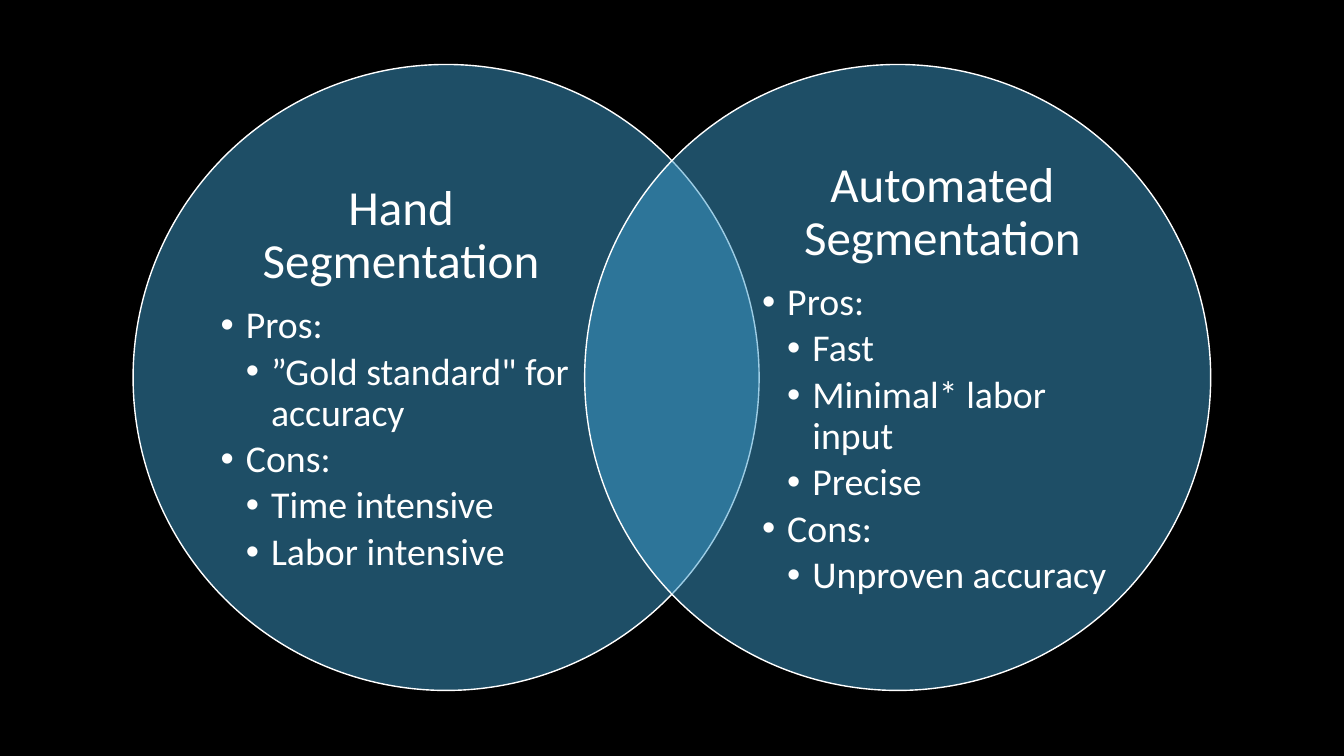
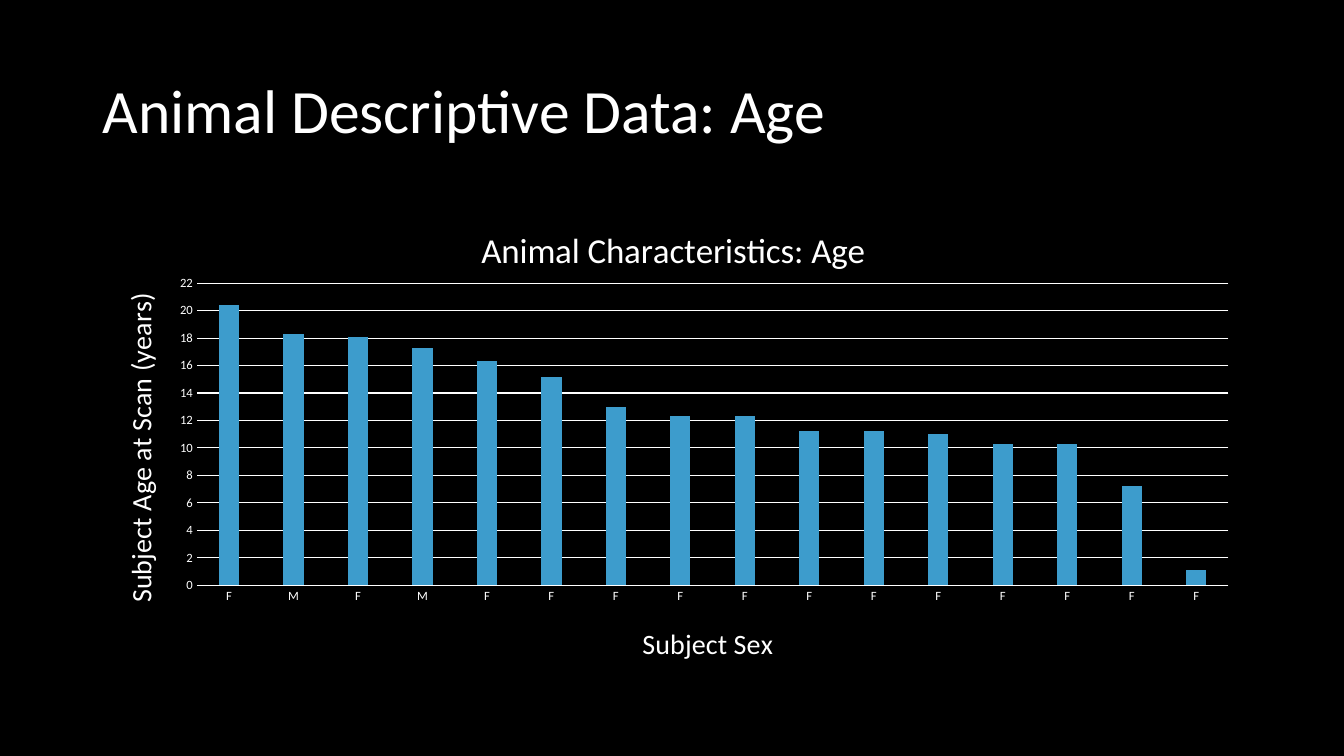
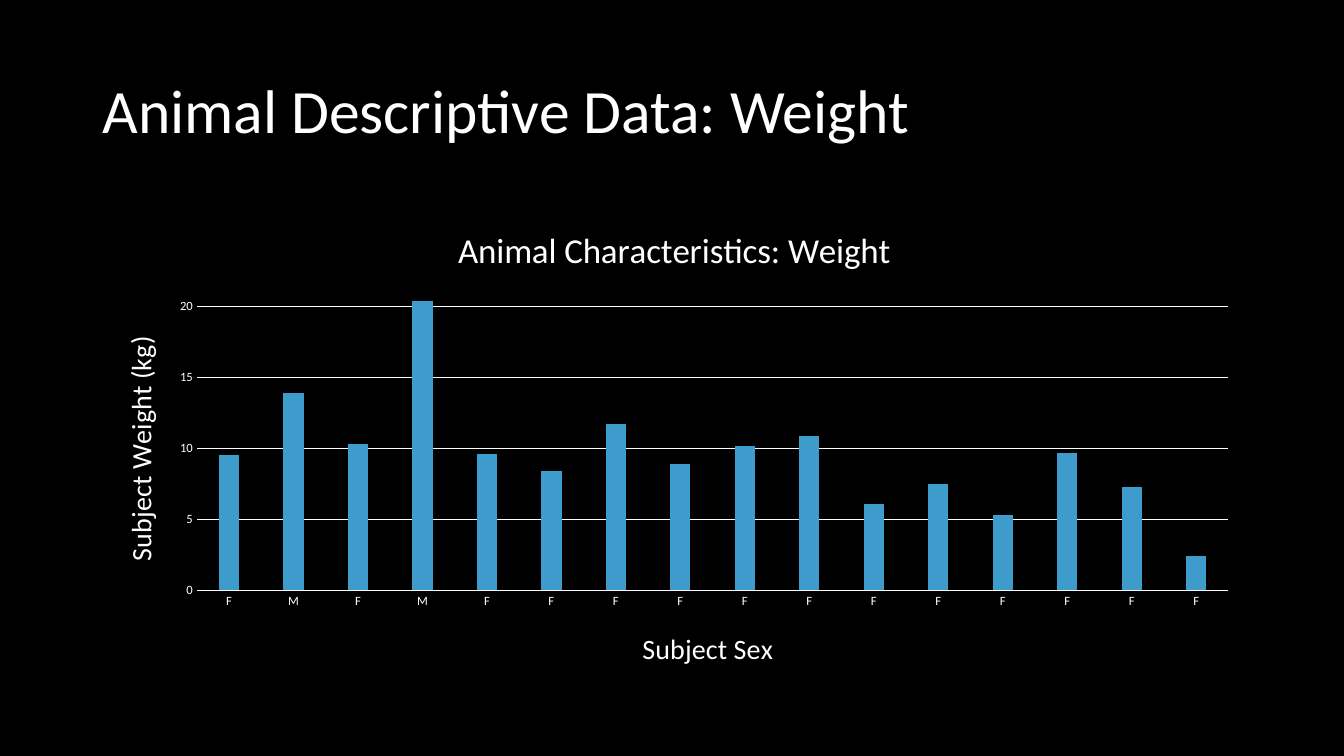
from dataclasses import dataclass

from lxml.etree import SubElement
from pptx import Presentation
from pptx.chart.data import CategoryChartData
from pptx.dml.color import RGBColor
from pptx.enum.chart import XL_CHART_TYPE, XL_TICK_MARK
from pptx.enum.shapes import MSO_SHAPE
from pptx.enum.text import MSO_ANCHOR, MSO_AUTO_SIZE, PP_ALIGN
from pptx.oxml import parse_xml
from pptx.oxml.ns import nsdecls, qn
from pptx.util import Inches, Pt

TITLE_ONLY, TWO_CONTENT = 5, 3


@dataclass(frozen=True)
class Theme:
    font: str = "Calibri"
    background: RGBColor = RGBColor(0x00, 0x00, 0x00)
    ink: RGBColor = RGBColor(0xFF, 0xFF, 0xFF)
    accent: RGBColor = RGBColor(0x3D, 0x9C, 0xCC)
    title: int = 44
    heading: int = 35
    item: int = 27
    chart_title: int = 25
    axis_title: int = 20
    tick_label: int = 9
    line_spacing: float = 0.9
    heading_gap: int = 12
    item_gap: int = 4
    indent: float = 0.25
    chart_line: float = 0.75


class Deck:
    """Holds the style and the current slide; boxes are percentages of the slide."""

    def __init__(self, theme):
        self.theme = theme
        self.presentation = Presentation()
        self.presentation.slide_width = Inches(13.333)
        self.presentation.slide_height = Inches(7.5)
        self.fill(self.presentation.slide_master.background, theme.background)
        self.slide = None

    def add_slide(self, layout):
        layouts = self.presentation.slide_layouts
        self.slide = self.presentation.slides.add_slide(layouts[layout])

    def box(self, left, top, width, height):
        across = self.presentation.slide_width / 100
        down = self.presentation.slide_height / 100
        return [int(left * across), int(top * down), int(width * across), int(height * down)]

    def move(self, shape, box):
        shape.left, shape.top, shape.width, shape.height = self.box(*box)

    def fill(self, target, color):
        target.fill.solid()
        target.fill.fore_color.rgb = color

    def style(self, font, size):
        font.name = self.theme.font
        font.size = Pt(size)
        font.bold = False
        font.color.rgb = self.theme.ink

    def add_text(self, paragraph, text, size):
        run = paragraph.add_run()
        run.text = text
        self.style(run.font, size)

    def prepare(self, text_frame):
        text_frame.word_wrap = True
        text_frame.auto_size = MSO_AUTO_SIZE.NONE
        text_frame.vertical_anchor = MSO_ANCHOR.MIDDLE

    def title(self, text, box):
        shape = self.slide.shapes.title
        self.move(shape, box)
        self.prepare(shape.text_frame)
        paragraph = shape.text_frame.paragraphs[0]
        paragraph.alignment = PP_ALIGN.LEFT
        paragraph.line_spacing = self.theme.line_spacing
        self.add_text(paragraph, text, self.theme.title)

    def circle(self, box):
        shape = self.slide.shapes.add_shape(MSO_SHAPE.OVAL, *self.box(*box))
        shape.shadow.inherit = False
        self.fill(shape, self.theme.accent)
        color = shape.fill._xPr.find(qn("a:solidFill"))[0]
        SubElement(color, qn("a:alpha"), val="50000")
        shape.line.color.rgb = self.theme.ink
        shape.line.width = Pt(1)

    def outline(self, index, heading, items, box):
        """Fills a body placeholder with a heading and (level, text) items, above the shapes."""
        shape = self.slide.placeholders[index]
        self.slide.shapes._spTree.append(shape._element)
        self.move(shape, box)
        frame = shape.text_frame
        self.prepare(frame)
        frame.margin_left = frame.margin_right = frame.margin_top = frame.margin_bottom = 0
        theme = self.theme
        for level, text in [(0, heading)] + items:
            paragraph = frame.add_paragraph() if level else frame.paragraphs[0]
            properties = paragraph._p.get_or_add_pPr()
            properties.set("marL", str(Inches(theme.indent * level)))
            properties.set("indent", str(-Inches(theme.indent) if level else 0))
            if level:
                SubElement(properties, qn("a:buChar"), char="•")
            else:
                SubElement(properties, qn("a:buNone"))
            paragraph.level = level
            paragraph.alignment = PP_ALIGN.LEFT if level else PP_ALIGN.CENTER
            paragraph.line_spacing = theme.line_spacing
            paragraph.space_before = Pt(0)
            paragraph.space_after = Pt(theme.item_gap if level else theme.heading_gap)
            self.add_text(paragraph, text, theme.item if level else theme.heading)

    def pin(self, element, position, **places):
        """Places a part of a chart by shares of the chart's size."""
        for layout in element.findall(qn("c:layout")):
            element.remove(layout)
        target = '<c:layoutTarget val="inner"/>' if "w" in places else ""
        modes = "".join(f'<c:{key}Mode val="edge"/>' for key in "xy")
        values = "".join(f'<c:{key} val="{value}"/>' for key, value in places.items())
        element.insert(position, parse_xml(
            f'<c:layout {nsdecls("c")}><c:manualLayout>{target}{modes}{values}'
            "</c:manualLayout></c:layout>"))

    def chart_text(self, title, text, size, left, top):
        self.add_text(title.text_frame.paragraphs[0], text, size)
        self.pin(title._element, 1, x=left, y=top)

    def line(self, line_format):
        line_format.color.rgb = self.theme.ink
        line_format.width = Pt(self.theme.chart_line)

    def columns(self, box, categories, values, titles, places, plot, step):
        """Titles and places are given for the chart, the category axis and the value axis."""
        theme = self.theme
        data = CategoryChartData()
        data.categories = categories
        data.add_series("Series 1", values)
        chart = self.slide.shapes.add_chart(
            XL_CHART_TYPE.COLUMN_CLUSTERED, *self.box(*box), data).chart
        self.style(chart.font, theme.tick_label)
        chart.has_legend = False
        chart.has_title = True
        category_axis, value_axis = chart.category_axis, chart.value_axis
        for axis in (category_axis, value_axis):
            axis.major_tick_mark = axis.minor_tick_mark = XL_TICK_MARK.NONE
            self.style(axis.tick_labels.font, theme.tick_label)
        parts = [chart.chart_title, category_axis.axis_title, value_axis.axis_title]
        sizes = [theme.chart_title, theme.axis_title, theme.axis_title]
        for part, text, size, place in zip(parts, titles, sizes, places):
            self.chart_text(part, text, size, *place)
        direction = value_axis.axis_title.text_frame._txBody.bodyPr
        direction.set("rot", "-5400000")
        direction.set("vert", "horz")

        self.line(category_axis.format.line)
        value_axis.format.line.fill.background()
        self.line(value_axis.major_gridlines.format.line)
        value_axis.minimum_scale, value_axis.maximum_scale = 0, 22
        value_axis.major_unit = step

        bars = chart.plots[0]
        bars.vary_by_categories = False
        bars.gap_width, bars.overlap = 219, -27
        self.fill(bars.series[0].format, theme.accent)
        self.pin(chart._chartSpace.chart.plotArea, 0, **dict(zip("xywh", plot)))


def segmentation_slide(deck):
    deck.add_slide(TWO_CONTENT)
    title = deck.slide.shapes.title._element
    title.getparent().remove(title)
    for left in (9.9, 43.5):
        deck.circle((left, 8.53, 46.58, 82.8))
    hand = [
        (1, "Pros:"), (2, "”Gold standard\" for accuracy"),
        (1, "Cons:"), (2, "Time intensive"), (2, "Labor intensive"),
    ]
    automated = [
        (1, "Pros:"), (2, "Fast"), (2, "Minimal* labor input"), (2, "Precise"),
        (1, "Cons:"), (2, "Unproven accuracy"),
    ]
    deck.outline(1, "Hand Segmentation", hand, (16.42, 18.4, 26.85, 63.33))
    deck.outline(2, "Automated Segmentation", automated, (56.7, 18.4, 26.85, 63.33))


def animal_slide(deck, topic, axis_title, values, places, plot, step):
    deck.add_slide(TITLE_ONLY)
    deck.title(f"Animal Descriptive Data: {topic}", (6.88, 5.33, 86.25, 19.33))
    titles = [f"Animal Characteristics: {topic}", "Subject Sex", axis_title]
    sexes = list("FMFM") + ["F"] * 12
    deck.columns((6.88, 26.67, 86.25, 63.45), sexes, values, titles, places, plot, step)


def main():
    deck = Deck(Theme())
    segmentation_slide(deck)
    animal_slide(
        deck, "Age", "Subject Age at Scan (years)",
        [20.4, 18.3, 18.1, 17.3, 16.3, 15.2, 13, 12.3,
         12.3, 11.2, 11.2, 11, 10.3, 10.3, 7.2, 1.1],
        places=[(0.33, 0.04), (0.47, 0.87), (0.02, 0.18)],
        plot=(0.09, 0.17, 0.89, 0.63), step=2)
    animal_slide(
        deck, "Weight", "Subject Weight (kg)",
        [9.5, 13.9, 10.3, 20.4, 9.6, 8.4, 11.7, 8.9,
         10.2, 10.9, 6.1, 7.5, 5.3, 9.7, 7.3, 2.4],
        places=[(0.31, 0.04), (0.47, 0.88), (0.02, 0.27)],
        plot=(0.09, 0.16, 0.89, 0.65), step=5)
    deck.presentation.save("out.pptx")


if __name__ == "__main__":
    main()
